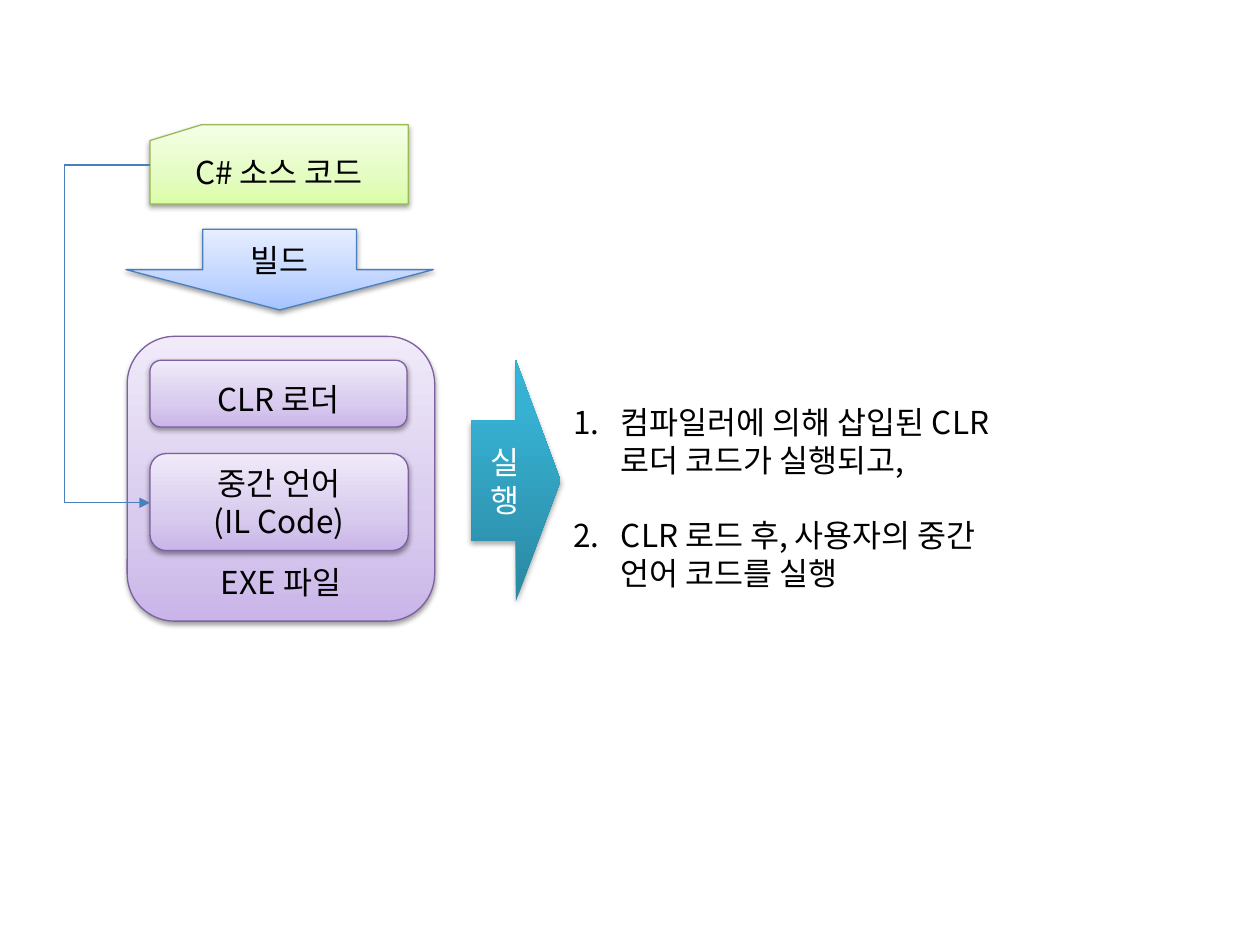
from lxml import etree
from pptx import Presentation
from pptx import util as u
from pptx.dml.color import RGBColor
from pptx.enum import shapes, text
from pptx.oxml import parse_xml
from pptx.oxml.ns import nsdecls, qn

FONT = "Noto Sans CJK KR"
COLORS = {
    "text": "000000", "white": "FFFFFF", "shadow": "000000",
    "purple_line": "7D60A0", "green_line": "98B955", "blue_line": "4B7EBC",
}
# Gradient stops run from the bottom of a shape to its top.
GRADIENTS = {
    "purple": [(0, "C9B5E8"), (35, "D8CBEE"), (100, "F0EAF9")],
    "green": [(0, "DAFDA7"), (35, "E4FCC2"), (100, "F5FFE7")],
    "blue": [(0, "A4C4FF"), (35, "BFD4FF"), (100, "E6EEFF")],
    "teal": [(0, "2A88A2"), (80, "37B1D2"), (100, "34B4D6")],
}
SHAPE = shapes.MSO_SHAPE
MIDDLE, BOTTOM = text.MSO_ANCHOR.MIDDLE, text.MSO_ANCHOR.BOTTOM


def rgb(name):
    return RGBColor.from_string(COLORS[name])


class Diagram:
    """Holds the text style and the slide being drawn."""

    def __init__(self, s, font=FONT, size=18):
        self.s, self.font, self.size = s, font, size

    def add_run(self, p, words, color="text"):
        r = p.add_run()
        r.text = words
        r.font.name, r.font.size = self.font, u.Pt(self.size)
        r.font.color.rgb = rgb(color)
        etree.SubElement(r._r.get_or_add_rPr(), qn("a:ea"), typeface=self.font)

    def set_gradient(self, sp, name):
        sp.fill.gradient()
        grad = sp._element.spPr.find(qn("a:gradFill"))
        stops = grad.find(qn("a:gsLst"))
        for stop in list(stops):
            stops.remove(stop)
        for pos, color in GRADIENTS[name]:
            gs = etree.SubElement(stops, qn("a:gs"), pos=str(pos * 1000))
            etree.SubElement(gs, qn("a:srgbClr"), val=color)
        grad.find(qn("a:lin")).set("ang", str(270 * 60000))

    def set_shadow(self, sp, alpha, distance):
        sp.shadow.inherit = False
        effects = sp._element.spPr.find(qn("a:effectLst"))
        effects.append(parse_xml(
            f'<a:outerShdw {nsdecls("a")} blurRad="{u.Pt(3.1)}" dist="{u.Pt(distance)}" '
            f'dir="5400000" rotWithShape="0"><a:srgbClr val="{COLORS["shadow"]}">'
            f'<a:alpha val="{alpha * 1000}"/></a:srgbClr></a:outerShdw>'))

    def shape(self, kind, box, gradient, lines, anchor=MIDDLE, outlined=True):
        sp = self.s.shapes.add_shape(kind, *map(u.Inches, box))
        self.set_gradient(sp, gradient)
        if outlined:
            sp.line.color.rgb = rgb(gradient + "_line")
            sp.line.width = u.Pt(0.75)
            self.set_shadow(sp, 38, 1.6)
        else:
            sp.line.fill.background()
            self.set_shadow(sp, 35, 1.8)
        tf = sp.text_frame
        tf.word_wrap, tf.vertical_anchor = True, anchor
        p = tf.paragraphs[0]
        p.alignment = text.PP_ALIGN.CENTER
        for i, words in enumerate(lines):
            if i:
                p.add_line_break()
            self.add_run(p, words, "text" if outlined else "white")

    def line(self, start, end, arrow_at_start=False):
        sp = self.s.shapes.add_connector(
            shapes.MSO_CONNECTOR.STRAIGHT, *map(u.Inches, start + end))
        sp.line.color.rgb, sp.line.width = rgb("blue_line"), u.Pt(0.75)
        if arrow_at_start:
            etree.SubElement(sp.line._get_or_add_ln(), qn("a:headEnd"), type="triangle")
        etree.SubElement(sp._element.spPr, qn("a:effectLst"))

    def numbered_list(self, box, items):
        tf = self.s.shapes.add_textbox(*map(u.Inches, box)).text_frame
        tf.word_wrap, tf.auto_size = True, text.MSO_AUTO_SIZE.SHAPE_TO_FIT_TEXT
        for i, words in enumerate(items):
            p = tf.add_paragraph() if i else tf.paragraphs[0]
            if i:
                p.space_before = u.Pt(21.5)
            pPr = p._p.get_or_add_pPr()
            pPr.set("marL", str(u.Inches(0.38)))
            pPr.set("indent", str(-u.Inches(0.38)))
            etree.SubElement(pPr, qn("a:buFont"), typeface=self.font)
            etree.SubElement(pPr, qn("a:buAutoNum"), type="arabicPeriod")
            self.add_run(p, words)


def main():
    prs = Presentation()
    prs.slide_width, prs.slide_height = u.Inches(10), u.Inches(7.5)
    d = Diagram(prs.slides.add_slide(prs.slide_layouts[6]))

    left, width = 1.19, 2.05
    d.shape(SHAPE.ROUNDED_RECTANGLE, (1.01, 2.67, 2.44, 2.26), "purple", ["EXE 파일"], BOTTOM)
    d.shape(SHAPE.FLOWCHART_CARD, (left, 0.99, width, 0.63), "green", ["C# 소스 코드"])
    d.shape(SHAPE.DOWN_ARROW, (1, 1.82, 2.44, 0.64), "blue", ["빌드"])
    d.shape(SHAPE.ROUNDED_RECTANGLE, (left, 3.6, width, 0.77), "purple",
            ["중간 언어", "(IL Code)"], BOTTOM)
    d.shape(SHAPE.ROUNDED_RECTANGLE, (left, 2.86, 2.04, 0.53), "purple", ["CLR 로더"], BOTTOM)

    rail, source_y, code_y = 0.51, 1.31, 3.99
    d.line((left, source_y), (rail, source_y))
    d.line((left, code_y), (rail, code_y), arrow_at_start=True)
    d.line((rail, source_y), (rail, code_y))

    d.shape(SHAPE.RIGHT_ARROW, (3.74, 2.86, 0.71, 1.91), "teal", ["실행"], outlined=False)
    d.numbered_list((4.45, 3.15, 3.54, 1.62), [
        "컴파일러에 의해 삽입된 CLR 로더 코드가 실행되고,",
        "CLR 로드 후, 사용자의 중간 언어 코드를 실행",
    ])
    prs.save("out.pptx")


if __name__ == "__main__":
    main()
